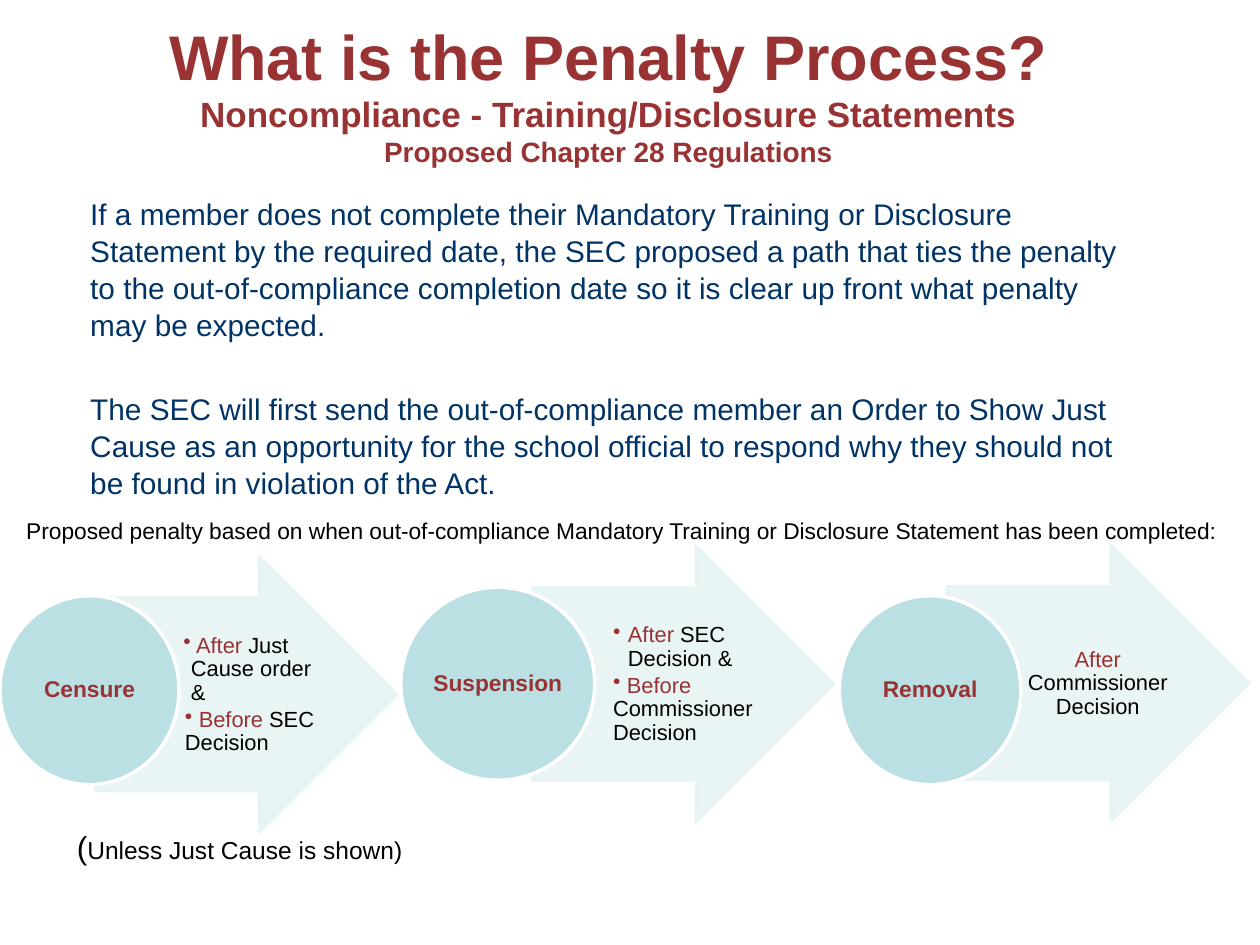
"""Build the penalty process slide with three circle-and-arrow stages."""
from dataclasses import dataclass, field

import lxml.etree
import pptx
import pptx.dml.color
import pptx.enum.shapes
import pptx.enum.text
import pptx.oxml.ns
import pptx.util

Cm = pptx.util.Cm
Pt = pptx.util.Pt
ANCHOR = pptx.enum.text.MSO_ANCHOR
ALIGN = pptx.enum.text.PP_ALIGN
AUTO_SIZE = pptx.enum.text.MSO_AUTO_SIZE
SHAPE = pptx.enum.shapes.MSO_SHAPE

RED, NAVY, BLACK, WHITE = "993333", "003366", "000000", "FFFFFF"
ARROW_COLOR, CIRCLE_COLOR = "E7F3F4", "BBE0E3"
ARROW_SIZE = (6.07, 5.54)
DETAIL_OFFSET = (1.52, 0.84)
DETAIL_SIZE = (2.97, 3.88)
DETAIL_INSETS = (0.1, 0.03, 0.05, 0.03)
CIRCLE_INSETS = (0.03,) * 4


@dataclass
class TextRun:
    text: str
    size: float
    color: str = BLACK
    bold: bool = False


@dataclass
class TextParagraph:
    runs: list[TextRun]
    format: dict = field(default_factory=dict)
    bullet: bool = False
    margin: float = 0
    indent: float = 0


@dataclass
class Stage:
    label: str
    circle: tuple[float, float, float, float]
    arrow: tuple[float, float]
    details: list[TextParagraph]


def rgb(color: str) -> pptx.dml.color.RGBColor:
    """Turn a hex string into a colour."""
    return pptx.dml.color.RGBColor.from_string(color)


def apply(target, values: dict) -> None:
    """Set every attribute named in a dict."""
    for name, value in values.items():
        setattr(target, name, value)


def add_run(paragraph, content: TextRun) -> None:
    """Add one formatted run."""
    run = paragraph.add_run()
    run.text = content.text
    apply(run.font, {"name": "Arial", "size": Pt(content.size), "bold": content.bold})
    run.font.color.rgb = rgb(content.color)


def write(frame, paragraphs: list[TextParagraph], insets=(0.25, 0.13, 0.25, 0.13),
          anchor=ANCHOR.TOP, wrap: bool = True) -> None:
    """Fill a text frame with paragraphs."""
    sides = ("margin_left", "margin_top", "margin_right", "margin_bottom")
    apply(frame, dict(zip(sides, map(Cm, insets))))
    apply(frame, {"word_wrap": wrap, "vertical_anchor": anchor, "auto_size": AUTO_SIZE.NONE})
    for index, content in enumerate(paragraphs):
        paragraph = frame.add_paragraph() if index else frame.paragraphs[0]
        apply(paragraph, content.format)
        if content.bullet:
            properties = paragraph._p.get_or_add_pPr()
            properties.set("marL", str(Cm(content.margin)))
            properties.set("indent", str(Cm(content.indent)))
            bullet = lxml.etree.SubElement(properties, pptx.oxml.ns.qn("a:buChar"))
            bullet.set("char", "•")
        for run in content.runs:
            add_run(paragraph, run)


def add_text(slide, box: tuple, paragraphs: list[TextParagraph], **options) -> None:
    """Add a text box."""
    write(slide.shapes.add_textbox(*map(Cm, box)).text_frame, paragraphs, **options)


def add_figure(slide, kind, box: tuple, fill: str, line: str):
    """Add a preset shape with a flat fill and outline."""
    shape = slide.shapes.add_shape(kind, *map(Cm, box))
    shape.shadow.inherit = False
    shape.fill.solid()
    shape.fill.fore_color.rgb = rgb(fill)
    shape.line.color.rgb = rgb(line)
    shape.line.width = Pt(2)
    return shape


def add_stage(slide, stage: Stage) -> None:
    """Draw an arrow, its details and the labelled circle."""
    arrow = add_figure(slide, SHAPE.RIGHT_ARROW, stage.arrow + ARROW_SIZE,
                       ARROW_COLOR, ARROW_COLOR)
    arrow.adjustments[0] = 0.7
    arrow.adjustments[1] = 0.5
    for color in arrow._element.spPr.iter(pptx.oxml.ns.qn("a:srgbClr")):
        lxml.etree.SubElement(color, pptx.oxml.ns.qn("a:alpha")).set("val", "90000")
    corner = tuple(a + b for a, b in zip(stage.arrow, DETAIL_OFFSET))
    add_text(slide, corner + DETAIL_SIZE, stage.details,
             insets=DETAIL_INSETS, anchor=ANCHOR.MIDDLE)
    circle = add_figure(slide, SHAPE.OVAL, stage.circle, CIRCLE_COLOR, WHITE)
    label = TextParagraph([TextRun(stage.label, 13, RED, True)], CENTERED)
    write(circle.text_frame, [label], insets=CIRCLE_INSETS, anchor=ANCHOR.MIDDLE)


def detail(first: str, rest: str, **options) -> TextParagraph:
    """Describe a line with a red opening and a black remainder."""
    return TextParagraph([TextRun(first, 12.5, RED), TextRun(rest, 12.5)], **options)


CENTERED = {"alignment": ALIGN.CENTER, "line_spacing": 0.9}
BULLETED = {"alignment": ALIGN.LEFT, "line_spacing": 0.9, "space_after": Pt(1.9)}
TITLE = [
    TextRun("What is the Penalty Process?", 36, RED, True),
    TextRun("Noncompliance - Training/Disclosure Statements", 20, RED, True),
    TextRun("Proposed Chapter 28 Regulations", 16, RED, True),
]
BODY = [
    "If a member does not complete their Mandatory Training or Disclosure Statement by the "
    "required date, the SEC proposed a path that ties the penalty to the out-of-compliance "
    "completion date so it is clear up front what penalty may be expected.",
    "The SEC will first send the out-of-compliance member an Order to Show Just Cause as an "
    "opportunity for the school official to respond why they should not be found in violation "
    "of the Act.",
]
CAPTION = ("Proposed penalty based on when out-of-compliance Mandatory Training or "
           "Disclosure Statement has been completed:")
STAGES = [
    Stage("Censure", (0, 12.01, 3.61, 3.81), (1.93, 11.23), [
        detail(" After", " Just Cause order &", format=BULLETED, bullet=True,
               margin=0.3, indent=-0.15),
        detail(" Before ", "SEC Decision", format=BULLETED, bullet=True, margin=0.18)]),
    Stage("Suspension", (8.08, 11.84, 3.91, 3.89), (10.74, 11.02), [
        detail("After", " SEC Decision &", format=BULLETED, bullet=True,
               margin=0.3, indent=-0.3),
        detail(" Before", " Commissioner Decision", format=BULLETED, bullet=True)]),
    Stage("Removal", (16.92, 12.01, 3.66, 3.81), (19.1, 11.0), [
        detail("After ", "Commissioner Decision", format=CENTERED)]),
]


def main() -> None:
    """Build and save the slide."""
    presentation = pptx.Presentation()
    apply(presentation, {"slide_width": Cm(25.4), "slide_height": Cm(19.05)})
    slide = presentation.slides.add_slide(presentation.slide_layouts[5])

    title = slide.shapes.title
    apply(title, {"left": Cm(1.57), "top": Cm(0.97), "width": Cm(21.39), "height": Cm(1.8)})
    write(title.text_frame, [TextParagraph([], {"alignment": ALIGN.CENTER})],
          anchor=ANCHOR.MIDDLE)
    heading = title.text_frame.paragraphs[0]
    for index, run in enumerate(TITLE):
        if index:
            heading.add_line_break()
        add_run(heading, run)

    body = [TextParagraph([TextRun(text, 17, NAVY)],
                          {"line_spacing": 1.04, "space_before": Pt(27 * index)})
            for index, text in enumerate(BODY)]
    add_text(slide, (1.57, 3.78, 21.39, 13.41), body)
    add_text(slide, (0.28, 10.29, 24.84, 0.81),
             [TextParagraph([TextRun(CAPTION, 13)])], wrap=False)
    for stage in STAGES:
        add_stage(slide, stage)
    note = [TextRun("(", 18), TextRun("Unless Just Cause is shown)", 14)]
    add_text(slide, (1.3, 16.56, 7.11, 1.02), [TextParagraph(note)], wrap=False)
    presentation.save("out.pptx")


if __name__ == "__main__":
    main()
